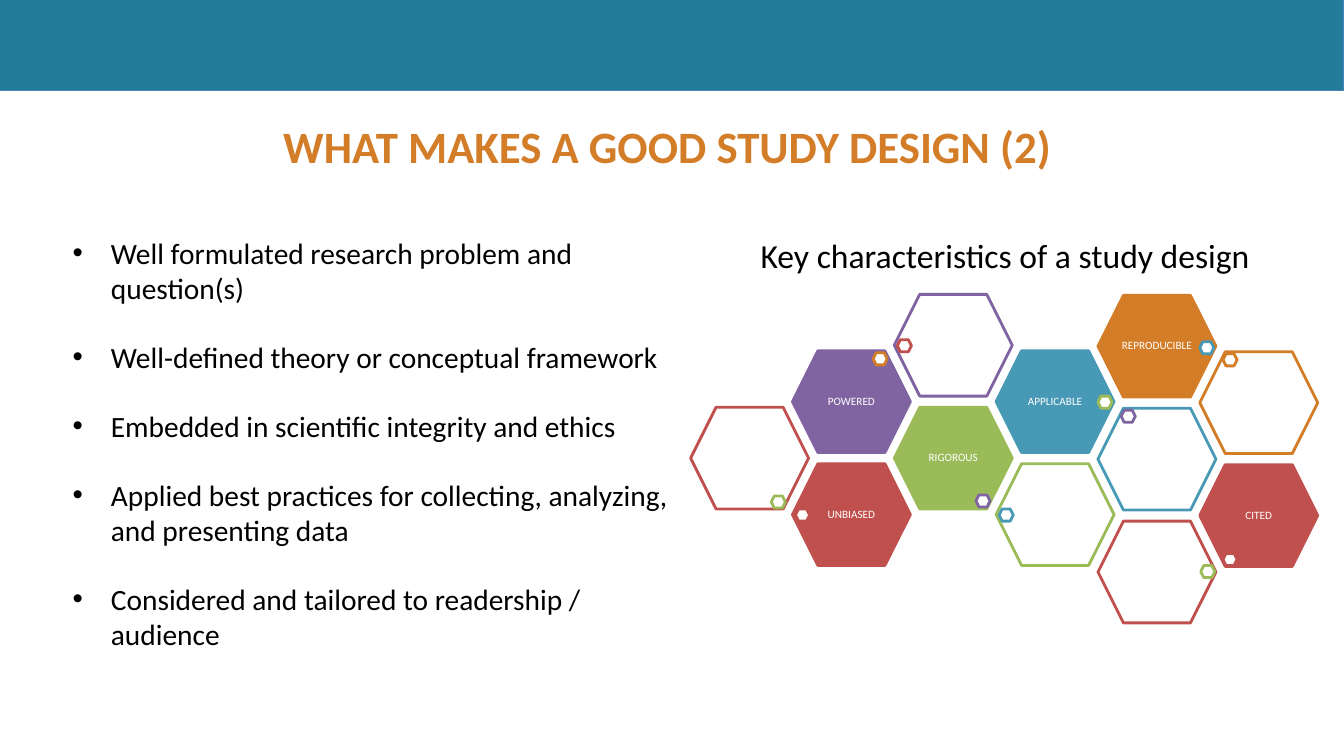
from lxml.etree import SubElement
from pptx import Presentation
from pptx.dml.color import RGBColor
from pptx.enum.shapes import MSO_SHAPE
from pptx.enum.text import MSO_ANCHOR, MSO_AUTO_SIZE, PP_ALIGN
from pptx.oxml.ns import qn
from pptx.util import Inches, Pt

TEAL, ORANGE, RED, GREEN = "237C9A", "D37D28", "C0504D", "9BBB59"
PURPLE, BLUE, WHITE, BLACK = "8064A2", "4799B5", "FFFFFF", "000000"


def color(value):
    return RGBColor.from_string(value)


def add_filled_shape(shapes, kind, box, fill, line, line_width):
    shape = shapes.add_shape(kind, *[Inches(value) for value in box])
    shape.shadow.inherit = False
    shape.fill.solid()
    shape.fill.fore_color.rgb = color(fill)
    shape.line.color.rgb = color(line)
    shape.line.width = Pt(line_width)
    return shape


presentation = Presentation()
presentation.slide_width = Inches(13.33)
presentation.slide_height = Inches(7.5)
slide = presentation.slides.add_slide(presentation.slide_layouts[1])
title, body = slide.placeholders

# Top band
add_filled_shape(slide.shapes, MSO_SHAPE.RECTANGLE, (0, 0, 13.33, 0.9), TEAL, "4B7EBC", 0.75)

# Title
title.left, title.top = Inches(0.62), Inches(1.09)
title.width, title.height = Inches(12), Inches(0.65)
frame = title.text_frame
frame.text = "WHAT MAKES A GOOD STUDY DESIGN (2)"
frame.auto_size = MSO_AUTO_SIZE.NONE
frame.margin_bottom = 0
frame.vertical_anchor = MSO_ANCHOR.MIDDLE
paragraph = frame.paragraphs[0]
paragraph.alignment = PP_ALIGN.CENTER
paragraph.font.name = "Calibri"
paragraph.font.size = Pt(32)
paragraph.font.bold = True
paragraph.font.color.rgb = color(ORANGE)

# Bulleted list
body.left, body.top = Inches(0.62), Inches(2.28)
body.width, body.height = Inches(6.23), Inches(4.13)
criteria = [
    "Well formulated research problem and question(s)",
    "Well-defined theory or conceptual framework",
    "Embedded in scientific integrity and ethics",
    "Applied best practices for collecting, analyzing, and presenting data",
    "Considered and tailored to readership / audience",
]
frame = body.text_frame
frame.text = "\n".join(criteria)
frame.auto_size = MSO_AUTO_SIZE.NONE
for index, paragraph in enumerate(frame.paragraphs):
    paragraph.space_before = Pt(12 if index else 0)
    paragraph.space_after = Pt(12)
    properties = paragraph._p.get_or_add_pPr()
    properties.set("marL", str(Inches(0.38)))
    properties.set("indent", str(-Inches(0.38)))
    SubElement(properties, qn("a:buFont"), typeface="Arial")
    SubElement(properties, qn("a:buChar"), char="•")
    paragraph.font.name = "Calibri"
    paragraph.font.size = Pt(21)
    paragraph.font.color.rgb = color(BLACK)

# Honeycomb: column, row, label (empty for an outline), color,
# then offset and color of the small marker
cells = [
    (1, 3, "UNBIASED", RED, (0.03, 0.45), RED),
    (0, 2, "", RED, (0.8, 0.88), GREEN),
    (2, 2, "RIGOROUS", GREEN, (0.81, 0.87), PURPLE),
    (3, 3, "", GREEN, (0.03, 0.45), BLUE),
    (1, 1, "POWERED", PURPLE, (0.8, 0.02), ORANGE),
    (2, 0, "", PURPLE, (0.03, 0.45), RED),
    (3, 1, "APPLICABLE", BLUE, (1.01, 0.45), GREEN),
    (4, 2, "", BLUE, (0.23, 0.02), PURPLE),
    (4, 0, "REPRODUCIBLE", ORANGE, (1.01, 0.46), BLUE),
    (5, 1, "", ORANGE, (0.23, 0.02), ORANGE),
    (5, 3, "CITED", RED, (0.23, 0.88), RED),
    (4, 4, "", RED, (1.02, 0.44), GREEN),
]
honeycomb = slide.shapes.add_group_shape().shapes
for column, row, label, accent, (marker_x, marker_y), marker_color in cells:
    left = 6.85 + 1.01 * column
    top = 2.92 + 0.56 * row + (0.01 if column > 3 else 0)
    hexagon = add_filled_shape(honeycomb, MSO_SHAPE.HEXAGON, (left, top, 1.17, 1.01),
                               accent if label else WHITE, accent, 2)
    if label:
        frame = hexagon.text_frame
        frame.text = label
        frame.word_wrap = False
        frame.margin_left = frame.margin_right = 0
        frame.margin_top = frame.margin_bottom = Inches(0.01)
        frame.vertical_anchor = MSO_ANCHOR.MIDDLE
        paragraph = frame.paragraphs[0]
        paragraph.alignment = PP_ALIGN.CENTER
        paragraph.line_spacing = 0.9
        paragraph.font.name = "Calibri"
        paragraph.font.size = Pt(8)
        paragraph.font.color.rgb = color(WHITE)
    add_filled_shape(honeycomb, MSO_SHAPE.HEXAGON,
                     (left + marker_x, top + marker_y, 0.14, 0.12), WHITE, marker_color, 2)

# Heading above the honeycomb
heading = slide.shapes.add_textbox(Inches(7.32), Inches(2.28), Inches(5.3), Inches(0.5))
frame = heading.text_frame
frame.word_wrap = True
frame.text = "Key characteristics of a study design"
paragraph = frame.paragraphs[0]
paragraph.alignment = PP_ALIGN.CENTER
paragraph.font.name = "Calibri"
paragraph.font.size = Pt(24)
paragraph.font.color.rgb = color(BLACK)

presentation.save("out.pptx")
